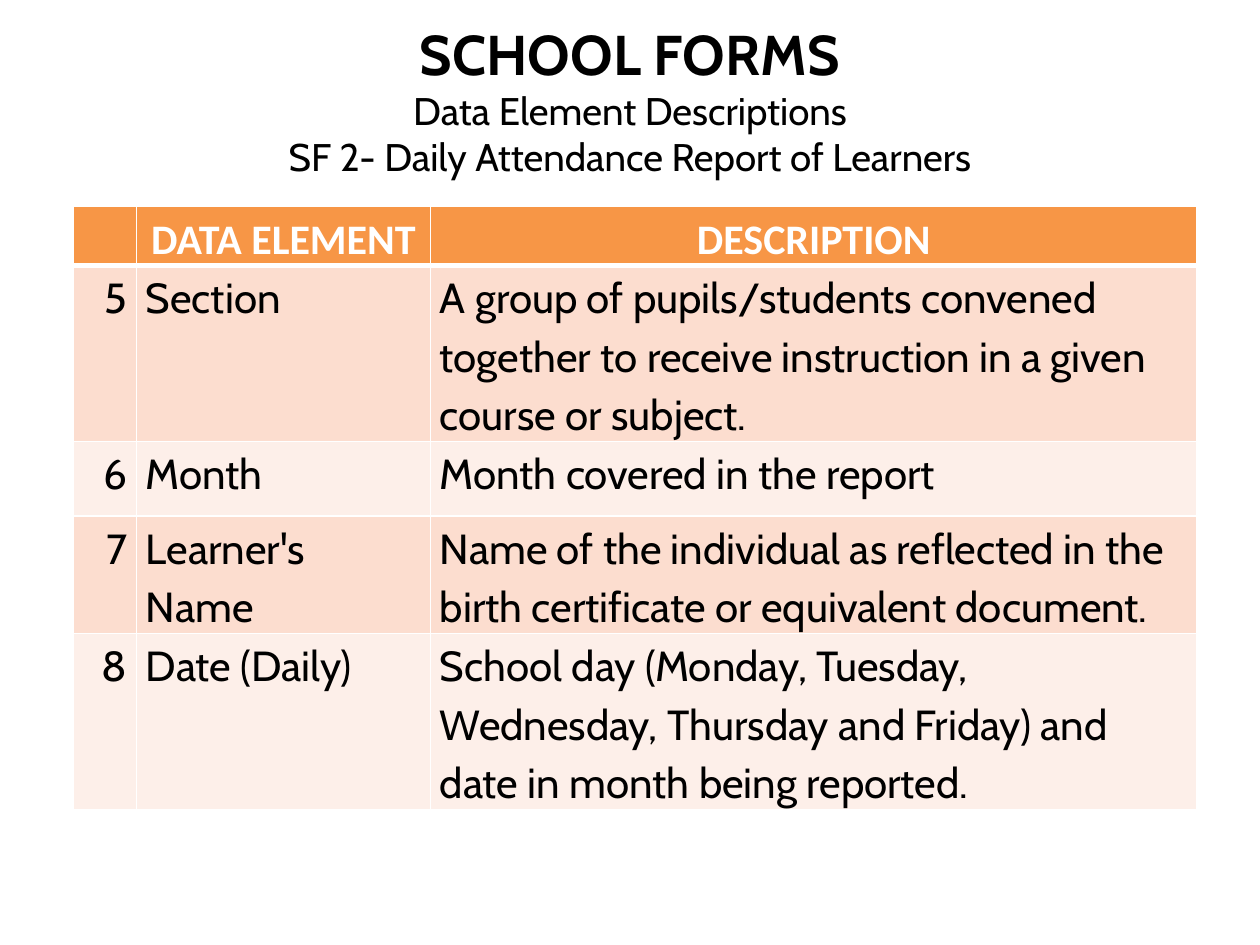
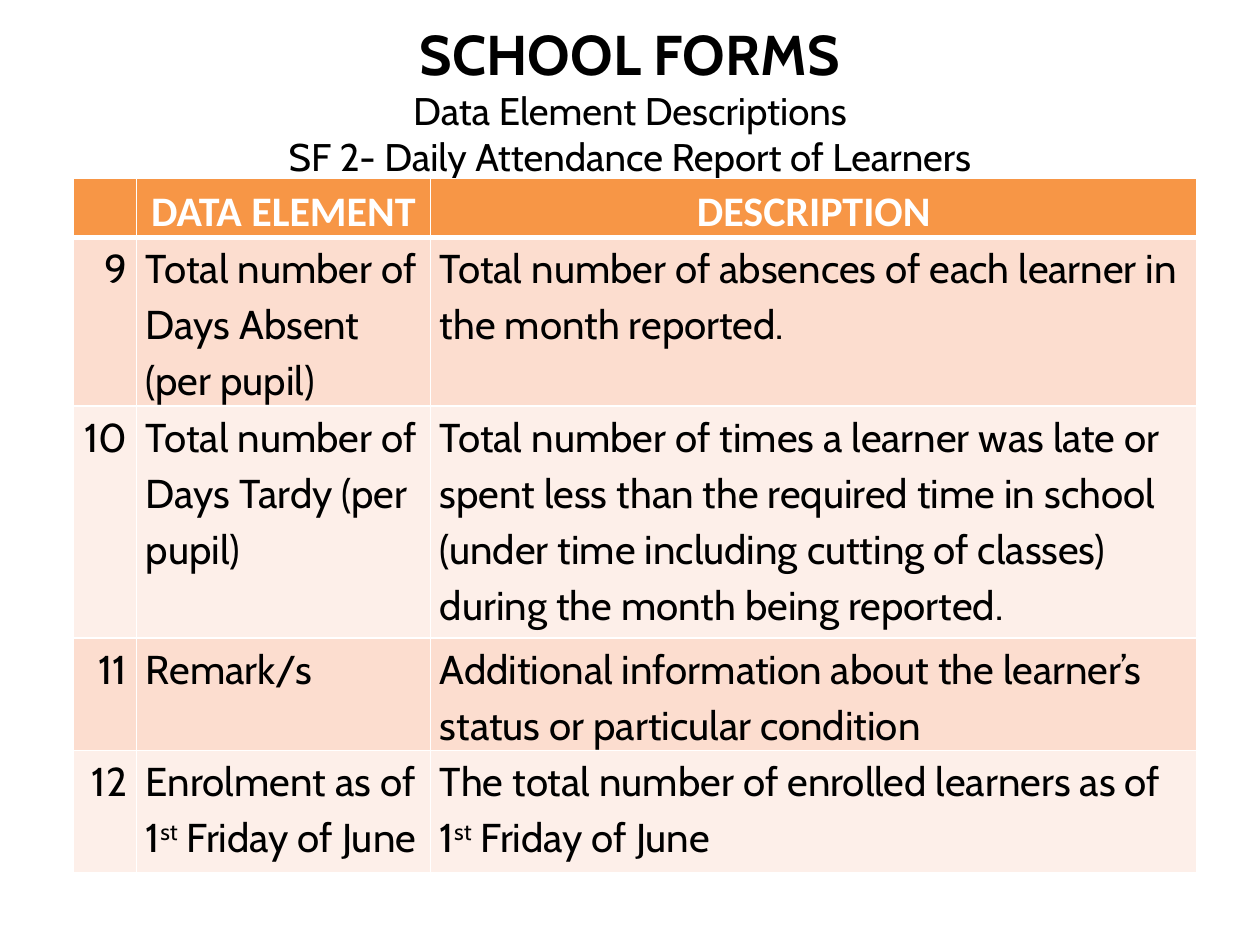
from lxml import etree
from pptx import Presentation
from pptx.dml.color import RGBColor
from pptx.enum.text import MSO_ANCHOR, MSO_AUTO_SIZE, PP_ALIGN
from pptx.oxml.ns import qn
from pptx.util import Pt

LEFT, CENTER, RIGHT = PP_ALIGN.LEFT, PP_ALIGN.CENTER, PP_ALIGN.RIGHT
MIDDLE, NO_FIT = MSO_ANCHOR.MIDDLE, MSO_AUTO_SIZE.NONE

BLACK, WHITE, ORANGE = "000000", "FFFFFF", "F79646"
BANDS = ["FCDDCF", "FDEFE9"]
BODY_FONT, HEADER_FONT = "Cabin", "Calibri"
TITLE_LINES = [
    ("SCHOOL FORMS", 32, True),
    ("Data Element Descriptions", 22, False),
    ("SF 2- Daily Attendance Report of Learners", 22, False),
]
HEADER = ("", "DATA ELEMENT", "DESCRIPTION")
COLUMN_WIDTHS = [36, 168, 438]

# Table top, body text size, row heights and rows; bars enclose superscripts
PAGES = [
    (118, 24, [32.5, 59, 42.5, 59, 70], [
        ("5", "Section",
         "A group of pupils/students convened together to receive "
         "instruction in a given course or subject."),
        ("6", "Month", "Month covered in the report"),
        ("7", "Learner's Name",
         "Name of the individual as reflected in the birth certificate "
         "or equivalent document."),
        ("8", "Date (Daily)",
         "School day (Monday, Tuesday, Wednesday, Thursday and Friday) "
         "and date in month being reported."),
    ]),
    (102, 23, [32.5, 59, 132.5, 59, 70], [
        ("9", "Total number of Days Absent (per pupil)",
         "Total number of absences of each learner in the month reported."),
        ("10", "Total number of Days Tardy (per pupil)",
         "Total number of times a learner was late or spent less than the "
         "required time in school (under time including cutting of classes) "
         "during the month being reported."),
        ("11", "Remark/s",
         "Additional information about the learner’s status or particular "
         "condition"),
        ("12", "Enrolment as of 1|st| Friday of June",
         "The total number of enrolled learners as of 1|st| Friday of June"),
    ]),
]


def color(hex_text):
    return RGBColor.from_string(hex_text)


def add_border(cell, side, width):
    line = etree.SubElement(cell._tc.get_or_add_tcPr(), qn("a:ln" + side),
                            w=str(Pt(width)))
    fill = etree.SubElement(line, qn("a:solidFill"))
    etree.SubElement(fill, qn("a:srgbClr"), val=WHITE)


deck = Presentation()
deck.slide_width, deck.slide_height = Pt(720), Pt(540)

for table_top, body_size, row_heights, rows in PAGES:
    page = deck.slides.add_slide(deck.slide_layouts[5])

    # Title
    title = page.shapes.title
    title.left, title.top = Pt(36), Pt(12)
    title.width, title.height = Pt(648), Pt(90)
    frame = title.text_frame
    frame.auto_size, frame.vertical_anchor = NO_FIT, MIDDLE
    para = frame.paragraphs[0]
    para.alignment = CENTER
    para.font.name, para.font.color.rgb = BODY_FONT, color(BLACK)
    for index, (text, size, bold) in enumerate(TITLE_LINES):
        if index:
            para.add_line_break()
        span = para.add_run()
        span.text = text
        span.font.size, span.font.bold = Pt(size), bold

    # Table grid
    table = page.shapes.add_table(
        len(row_heights), len(COLUMN_WIDTHS), Pt(42), Pt(table_top),
        Pt(sum(COLUMN_WIDTHS)), Pt(sum(row_heights))).table
    for column, width in zip(table.columns, COLUMN_WIDTHS):
        column.width = Pt(width)
    for row, height in zip(table.rows, row_heights):
        row.height = Pt(height)

    # Cells
    for row_index, texts in enumerate([HEADER] + rows):
        is_header = row_index == 0
        for column_index, text in enumerate(texts):
            cell = table.cell(row_index, column_index)
            for side in "LRTB":
                thick = (row_index, side) in [(0, "B"), (1, "T")]
                add_border(cell, side, 3 if thick else 1)
            cell.fill.solid()
            cell.fill.fore_color.rgb = color(
                ORANGE if is_header else BANDS[(row_index - 1) % 2])
            cell.margin_left = cell.margin_right = Pt(5.4)
            cell.margin_top = cell.margin_bottom = 0

            para = cell.text_frame.paragraphs[0]
            para.line_spacing = 1.15
            para.alignment = (CENTER if is_header
                              else RIGHT if column_index == 0 else LEFT)
            para.font.name = HEADER_FONT if is_header else BODY_FONT
            para.font.size = Pt(24 if is_header else body_size)
            para.font.bold = is_header
            para.font.color.rgb = color(WHITE if is_header else BLACK)
            if not text:
                continue
            for part_index, part in enumerate(text.split("|")):
                span = para.add_run()
                span.text = part
                if part_index % 2:
                    span._r.get_or_add_rPr().set("baseline", "30000")

deck.save("out.pptx")
